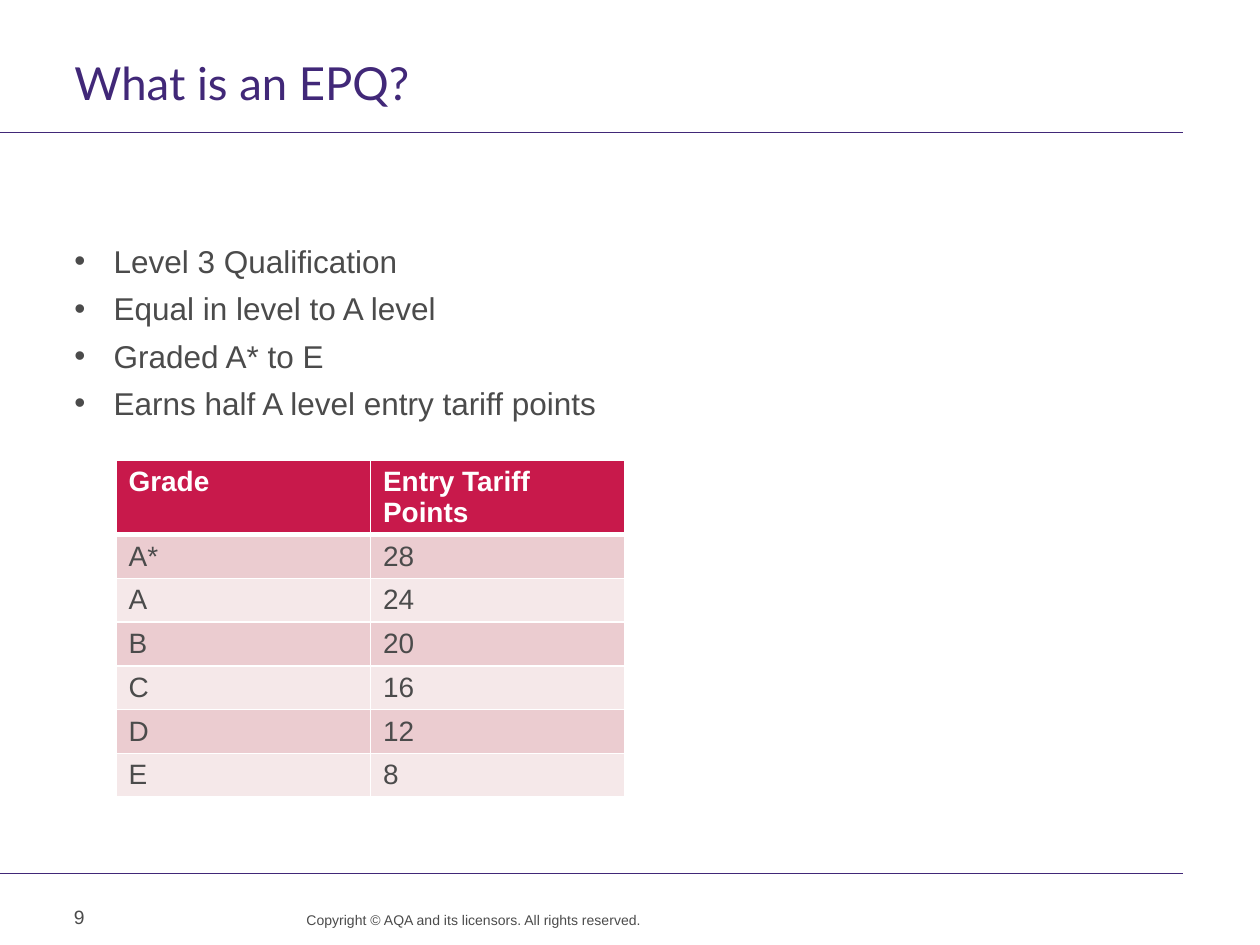
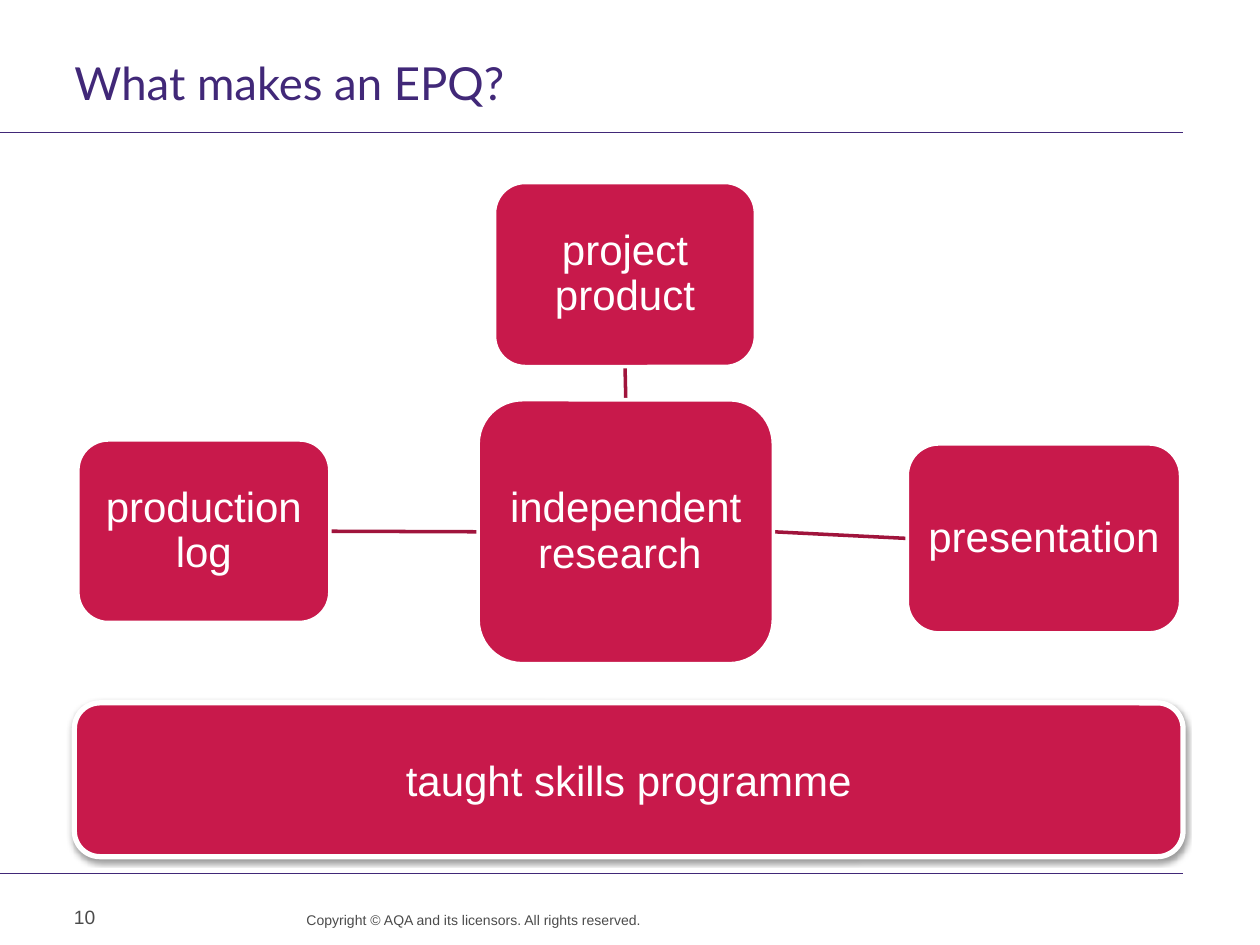
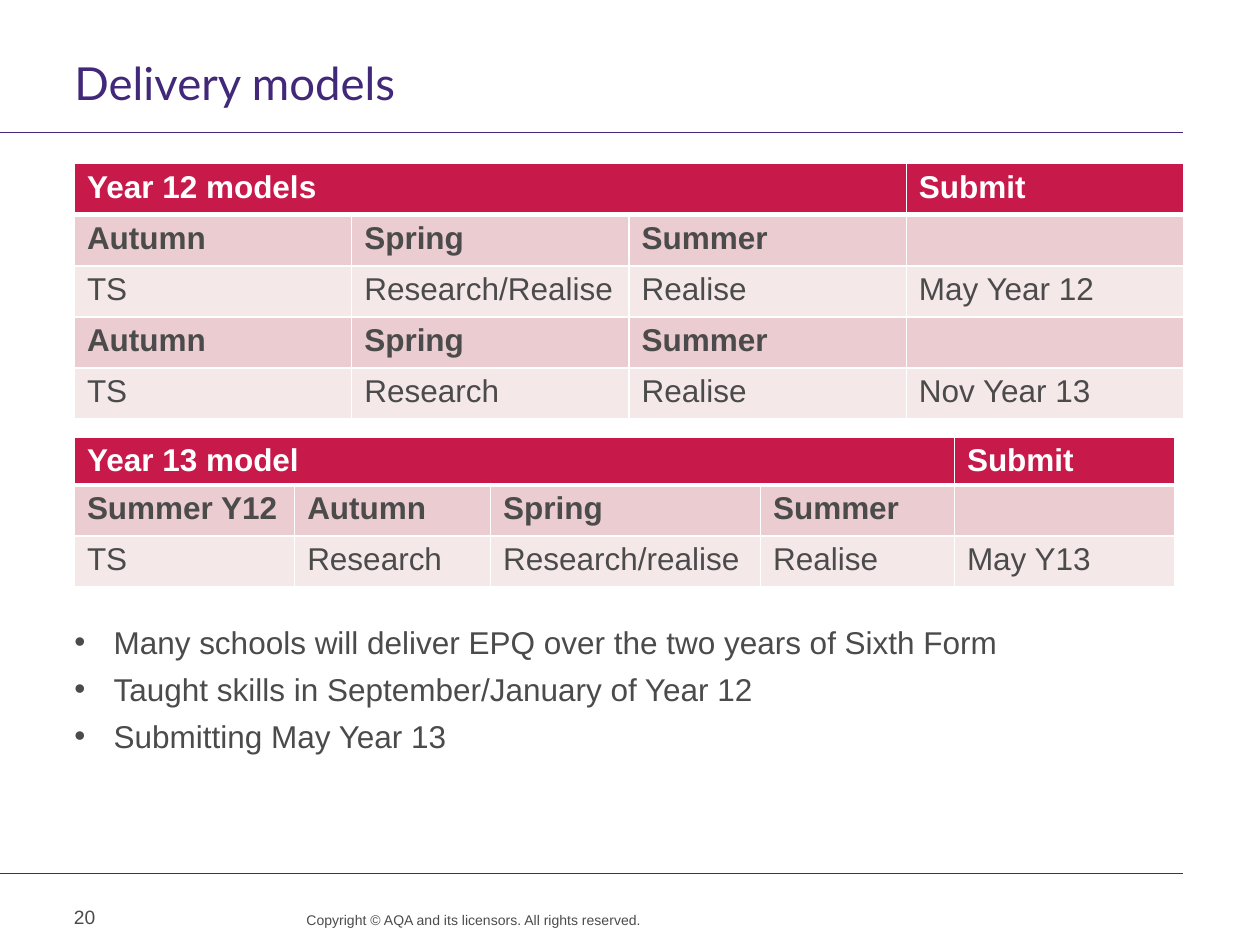
from dataclasses import dataclass

from lxml.etree import SubElement
from pptx import Presentation
from pptx.dml.color import RGBColor
from pptx.enum.shapes import MSO_CONNECTOR, MSO_SHAPE
from pptx.enum.text import MSO_ANCHOR, MSO_AUTO_SIZE, PP_ALIGN
from pptx.oxml import parse_xml
from pptx.oxml.ns import nsdecls, qn
from pptx.util import Cm, Pt

PURPLE = RGBColor(0x41, 0x28, 0x78)
GREY = RGBColor(0x4B, 0x4B, 0x4B)
CRIMSON = RGBColor(0xC8, 0x19, 0x4B)
DARK_CRIMSON = RGBColor(0xA0, 0x14, 0x3C)
ROSE = RGBColor(0xEB, 0xCC, 0xD0)
PALE_ROSE = RGBColor(0xF5, 0xE8, 0xE9)
WHITE = RGBColor(0xFF, 0xFF, 0xFF)
BODY_FONT = "Arial"
TITLE_FONT = "Lato"
COPYRIGHT = "Copyright © AQA and its licensors. All rights reserved."
LEFT = 1.5
RULE_END = 23.85
RULE_HEIGHTS = (2.67, 17.6)
TOP, LEFT_SIDE, BOTTOM, RIGHT_SIDE = range(4)


@dataclass(frozen=True)
class Box:
    """A rectangle in centimetres."""
    left: float
    top: float
    width: float
    height: float

    def lengths(self) -> tuple:
        """Return the four lengths for the add methods."""
        return Cm(self.left), Cm(self.top), Cm(self.width), Cm(self.height)


@dataclass(frozen=True)
class Card:
    """A rounded box with its label."""
    label: str
    box: Box


@dataclass(frozen=True)
class Branch:
    """A card joined to the central card."""
    card: Card
    hub_side: int
    card_side: int


@dataclass(frozen=True)
class Grid:
    """A table whose first header spans all columns but the last."""
    left: float
    top: float
    columns: tuple
    heights: tuple
    rows: tuple
    size: int
    bold_rows: tuple = (0,)


GRADES = Grid(
    2.34, 9.27, (5.13, 5.13), (1.47,) + (0.88,) * 6,
    (("Grade", "Entry Tariff Points"), ("A*", "28"), ("A", "24"),
     ("B", "20"), ("C", "16"), ("D", "12"), ("E", "8")), 16)
YEAR_12 = Grid(
    LEFT, 3.3, (5.59,) * 4, (1.03,) * 5,
    (("Year 12 models", "", "", "Submit"),
     ("Autumn", "Spring", "Summer", ""),
     ("TS", "Research/Realise", "Realise", "May Year 12"),
     ("Autumn", "Spring", "Summer", ""),
     ("TS", "Research", "Realise", "Nov Year 13")), 18, (0, 1, 3))
YEAR_13 = Grid(
    LEFT, 8.81, (4.44, 3.95, 5.44, 3.91, 4.44), (0.95, 1.03, 1.03),
    (("Year 13 model", "", "", "", "Submit"),
     ("Summer Y12", "Autumn", "Spring", "Summer", ""),
     ("TS", "Research", "Research/realise", "Realise", "May Y13")), 18, (0, 1))
HUB = Card("independent research ", Box(9.64, 8.06, 5.95, 5.32))
BRANCHES = (
    Branch(Card("production log", Box(1.57, 8.87, 5.08, 3.68)), LEFT_SIDE, RIGHT_SIDE),
    Branch(Card("presentation", Box(18.29, 8.95, 5.51, 3.81)), RIGHT_SIDE, LEFT_SIDE),
    Branch(Card("project product", Box(9.97, 3.68, 5.26, 3.71)), TOP, BOTTOM),
)
FOUNDATION = Card("taught skills programme", Box(LEFT, 14.17, 22.35, 3.1))


def add_run(paragraph, text: str, size: float, color: RGBColor,
            bold: bool = False, font: str = BODY_FONT) -> None:
    """Add one formatted run."""
    run = paragraph.add_run()
    run.text = text
    run.font.name = font
    run.font.size = Pt(size)
    run.font.bold = bold
    run.font.color.rgb = color


def set_frame(frame, margins: tuple, anchor: MSO_ANCHOR = MSO_ANCHOR.TOP) -> None:
    """Set wrapping, anchor and margins (left, top, right, bottom)."""
    frame.word_wrap = True
    frame.auto_size = MSO_AUTO_SIZE.NONE
    frame.vertical_anchor = anchor
    (frame.margin_left, frame.margin_top,
     frame.margin_right, frame.margin_bottom) = (Cm(margin) for margin in margins)


def place(shape, box: Box) -> None:
    """Move and size a placeholder."""
    shape.left, shape.top, shape.width, shape.height = box.lengths()


def add_line(slide, start: tuple, end: tuple, color: RGBColor, width: float):
    """Add a straight line without a shadow."""
    line = slide.shapes.add_connector(
        MSO_CONNECTOR.STRAIGHT, *(Cm(value) for value in start + end))
    line.line.color.rgb = color
    line.line.width = Pt(width)
    SubElement(line._element.spPr, qn("a:effectLst"))
    return line


def add_page(presentation, layout: int, title: str, number: int):
    """Add a slide with title, rules, number and copyright line."""
    slide = presentation.slides.add_slide(presentation.slide_layouts[layout])
    for height in RULE_HEIGHTS:
        add_line(slide, (0, height), (RULE_END, height), PURPLE, 0.6)
    heading = slide.shapes.title
    place(heading, Box(LEFT, 1.22, 22.35, 1.19))
    set_frame(heading.text_frame, (0, 0, 0.25, 0))
    paragraph = heading.text_frame.paragraphs[0]
    paragraph.alignment = PP_ALIGN.LEFT
    paragraph.line_spacing = Pt(28)
    add_run(paragraph, title, 26, PURPLE, font=TITLE_FONT)

    number_box = slide.shapes.add_textbox(*Box(1.24, 17.98, 1.93, 1.02).lengths())
    set_frame(number_box.text_frame, (0.25, 0.13, 0.25, 0.13), MSO_ANCHOR.MIDDLE)
    add_run(number_box.text_frame.paragraphs[0], str(number), 11, GREY)

    footer = slide.shapes.add_textbox(*Box(5.49, 18.36, 7.44, 0.66).lengths())
    set_frame(footer.text_frame, (0, 0, 0, 0))
    paragraph = footer.text_frame.paragraphs[0]
    paragraph.alignment = PP_ALIGN.RIGHT
    paragraph.line_spacing = Pt(10)
    add_run(paragraph, COPYRIGHT, 8, GREY)
    return slide


def fill_bullets(slide, box: Box, items: tuple) -> None:
    """Write a bulleted list into the body placeholder."""
    body = slide.placeholders[1]
    place(body, box)
    frame = body.text_frame
    set_frame(frame, (0, 0, 0.25, 0))
    for index, item in enumerate(items):
        paragraph = frame.add_paragraph() if index else frame.paragraphs[0]
        properties = paragraph._p.get_or_add_pPr()
        properties.set("marL", str(Cm(0.79)))
        properties.set("indent", str(-Cm(0.79)))
        color = SubElement(properties, qn("a:buClr"))
        SubElement(color, qn("a:srgbClr"), val=str(GREY))
        SubElement(properties, qn("a:buFont"), typeface=BODY_FONT)
        SubElement(properties, qn("a:buChar"), char="•")
        paragraph.space_before = Pt(5.4 if index else 0)
        add_run(paragraph, item, 18, GREY)


def set_borders(cell, top: float, bottom: float) -> None:
    """Draw white borders of the given widths in points."""
    properties = cell._tc.get_or_add_tcPr()
    for side, width in (("L", 1), ("R", 1), ("T", top), ("B", bottom)):
        line = SubElement(properties, qn(f"a:ln{side}"), w=str(Pt(width)))
        fill = SubElement(line, qn("a:solidFill"))
        SubElement(fill, qn("a:srgbClr"), val=str(WHITE))


def add_grid(slide, grid: Grid) -> None:
    """Add a banded table with a crimson header."""
    box = Box(grid.left, grid.top, sum(grid.columns), sum(grid.heights))
    table = slide.shapes.add_table(
        len(grid.rows), len(grid.columns), *box.lengths()).table
    for column, width in zip(table.columns, grid.columns):
        column.width = Cm(width)
    for index, (row, texts) in enumerate(zip(table.rows, grid.rows)):
        row.height = Cm(grid.heights[index])
        for cell, text in zip(row.cells, texts):
            set_borders(cell, 3 if index == 1 else 1, 3 if index == 0 else 1)
            cell.fill.solid()
            cell.fill.fore_color.rgb = (
                CRIMSON if index == 0 else ROSE if index % 2 else PALE_ROSE)
            if text:
                add_run(cell.text_frame.paragraphs[0], text, grid.size,
                        GREY if index else WHITE, index in grid.bold_rows)
    if len(grid.columns) > 2:
        table.cell(0, 0).merge(table.cell(0, len(grid.columns) - 2))


def add_card(slide, card: Card, outline: float = 2, line_spacing: float = 0.9):
    """Add a rounded crimson box with a centred label."""
    shape = slide.shapes.add_shape(MSO_SHAPE.ROUNDED_RECTANGLE, *card.box.lengths())
    shape.shadow.inherit = False
    shape.fill.solid()
    shape.fill.fore_color.rgb = CRIMSON
    shape.line.color.rgb = WHITE
    shape.line.width = Pt(outline)
    set_frame(shape.text_frame, (0.18,) * 4, MSO_ANCHOR.MIDDLE)
    paragraph = shape.text_frame.paragraphs[0]
    paragraph.alignment = PP_ALIGN.CENTER
    paragraph.line_spacing = line_spacing
    add_run(paragraph, card.label, 24, WHITE)
    return shape


def add_shadow(shape) -> None:
    """Give a shape a soft shadow below it."""
    shape._element.spPr.find(qn("a:effectLst")).append(parse_xml(
        f'<a:outerShdw {nsdecls("a")} blurRad="{Pt(3.1)}" dist="{Pt(1.6)}" '
        'dir="5400000" rotWithShape="0"><a:srgbClr val="000000">'
        '<a:alpha val="38000"/></a:srgbClr></a:outerShdw>'))


def add_branch(slide, hub, branch: Branch) -> None:
    """Add a card and join it to the hub with a line beneath it."""
    shape = add_card(slide, branch.card)
    line = add_line(slide, (0, 0), (0, 0), DARK_CRIMSON, 2)
    line.begin_connect(hub, branch.hub_side)
    line.end_connect(shape, branch.card_side)
    hub._element.addprevious(line._element)


def build_definition(presentation) -> None:
    """Build the slide on what the qualification is."""
    slide = add_page(presentation, 1, "What is an EPQ?", 9)
    fill_bullets(slide, Box(LEFT, 4.88, 22, 12.16), (
        "Level 3 Qualification", "Equal in level to A level",
        "Graded A* to E", "Earns half A level entry tariff points"))
    add_grid(slide, GRADES)


def build_components(presentation) -> None:
    """Build the diagram of the project's parts."""
    slide = add_page(presentation, 5, "What makes an EPQ?", 10)
    hub = add_card(slide, HUB)
    for branch in BRANCHES:
        add_branch(slide, hub, branch)
    add_shadow(add_card(slide, FOUNDATION, 3, 1))


def build_delivery(presentation) -> None:
    """Build the slide on delivery timetables."""
    slide = add_page(presentation, 1, "Delivery models", 20)
    add_grid(slide, YEAR_12)
    add_grid(slide, YEAR_13)
    fill_bullets(slide, Box(LEFT, 12.55, 22.35, 4.5), (
        "Many schools will deliver EPQ over the two years of Sixth Form",
        "Taught skills in September/January of Year 12",
        "Submitting May Year 13"))


def main() -> None:
    """Build and save the presentation."""
    presentation = Presentation()
    presentation.slide_width = Cm(25.4)
    presentation.slide_height = Cm(19.05)
    build_definition(presentation)
    build_components(presentation)
    build_delivery(presentation)
    presentation.save("out.pptx")


if __name__ == "__main__":
    main()
